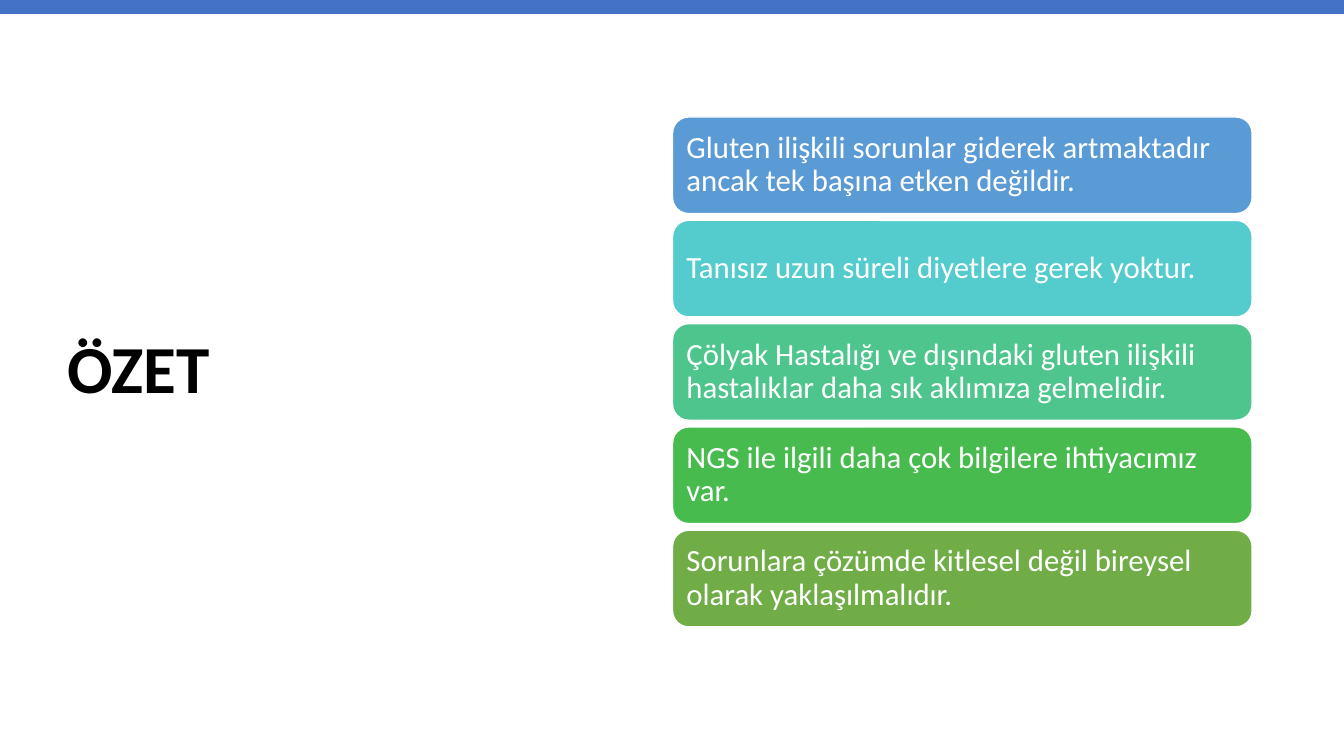
from dataclasses import dataclass

import pptx
import pptx.dml.color
import pptx.enum.shapes
import pptx.enum.text
import pptx.util
from pptx.shapes.autoshape import Shape
from pptx.slide import Slide

Pt = pptx.util.Pt
RGB = pptx.dml.color.RGBColor
SHAPES = pptx.enum.shapes.MSO_SHAPE


@dataclass(frozen=True)
class Theme:
    font: str = "Calibri"
    title_size: float = 48
    message_size: float = 22
    line_spacing: float = 0.9
    title_color: str = "000000"
    white: str = "FFFFFF"
    top_bar: str = "4472C4"


@dataclass(frozen=True)
class Message:
    text: str
    fill: str


THEME = Theme()
SLIDE_WIDTH, SLIDE_HEIGHT = 960, 540
BAR_HEIGHT = 10
CARD_LEFT, CARD_TOP = 480.4, 83.6
CARD_WIDTH, CARD_HEIGHT = 414, 69
CARD_PITCH = 73.8
CARD_INSET = 6.6

MESSAGES = [
    Message("Gluten ilişkili sorunlar giderek artmaktadır ancak tek başına etken değildir.", "5B9BD5"),
    Message("Tanısız uzun süreli diyetlere gerek yoktur.", "54CCCD"),
    Message("Çölyak Hastalığı ve dışındaki gluten ilişkili hastalıklar daha sık aklımıza gelmelidir.", "4DC58D"),
    Message("NGS ile ilgili daha çok bilgilere ihtiyacımız var.", "48BB4F"),
    Message("Sorunlara çözümde kitlesel değil bireysel olarak yaklaşılmalıdır.", "70AD47"),
]


def write_text(holder: Shape, text: str, size: float, color: str, bold: bool = False) -> None:
    """Write one left-aligned, vertically centred paragraph."""
    frame = holder.text_frame
    frame.word_wrap = True
    frame.auto_size = pptx.enum.text.MSO_AUTO_SIZE.NONE
    frame.vertical_anchor = pptx.enum.text.MSO_ANCHOR.MIDDLE
    paragraph = frame.paragraphs[0]
    paragraph.alignment = pptx.enum.text.PP_ALIGN.LEFT
    paragraph.line_spacing = THEME.line_spacing
    paragraph.space_before = Pt(0)
    run = paragraph.add_run()
    run.text = text
    run.font.name = THEME.font
    run.font.size = Pt(size)
    run.font.bold = bold
    run.font.color.rgb = RGB.from_string(color)


def add_title(slide: Slide, text: str) -> None:
    title = slide.shapes.title
    title.left, title.top = Pt(41), Pt(49)
    title.width, title.height = Pt(408), Pt(433.5)
    write_text(title, text, THEME.title_size, THEME.title_color, bold=True)


def add_top_bar(slide: Slide) -> None:
    bar = slide.shapes.add_shape(SHAPES.RECTANGLE, Pt(0), Pt(0), Pt(SLIDE_WIDTH), Pt(BAR_HEIGHT))
    bar.shadow.inherit = False
    bar.fill.solid()
    bar.fill.fore_color.rgb = RGB.from_string(THEME.top_bar)
    bar.line.fill.background()


def add_message_card(slide: Slide, message: Message, top: float) -> None:
    card = slide.shapes.add_shape(
        SHAPES.ROUNDED_RECTANGLE, Pt(CARD_LEFT), Pt(top), Pt(CARD_WIDTH), Pt(CARD_HEIGHT)
    )
    card.shadow.inherit = False
    card.fill.solid()
    card.fill.fore_color.rgb = RGB.from_string(message.fill)
    card.line.color.rgb = RGB.from_string(THEME.white)
    card.line.width = Pt(1)
    frame = card.text_frame
    frame.margin_left = frame.margin_right = Pt(CARD_INSET)
    frame.margin_top = frame.margin_bottom = Pt(CARD_INSET)
    write_text(card, message.text, THEME.message_size, THEME.white)


def main() -> None:
    presentation = pptx.Presentation()
    presentation.slide_width = Pt(SLIDE_WIDTH)
    presentation.slide_height = Pt(SLIDE_HEIGHT)
    summary = presentation.slides.add_slide(presentation.slide_layouts.get_by_name("Title Only"))
    add_title(summary, "ÖZET")
    add_top_bar(summary)
    for index, message in enumerate(MESSAGES):
        add_message_card(summary, message, CARD_TOP + index * CARD_PITCH)
    presentation.save("out.pptx")


if __name__ == "__main__":
    main()
